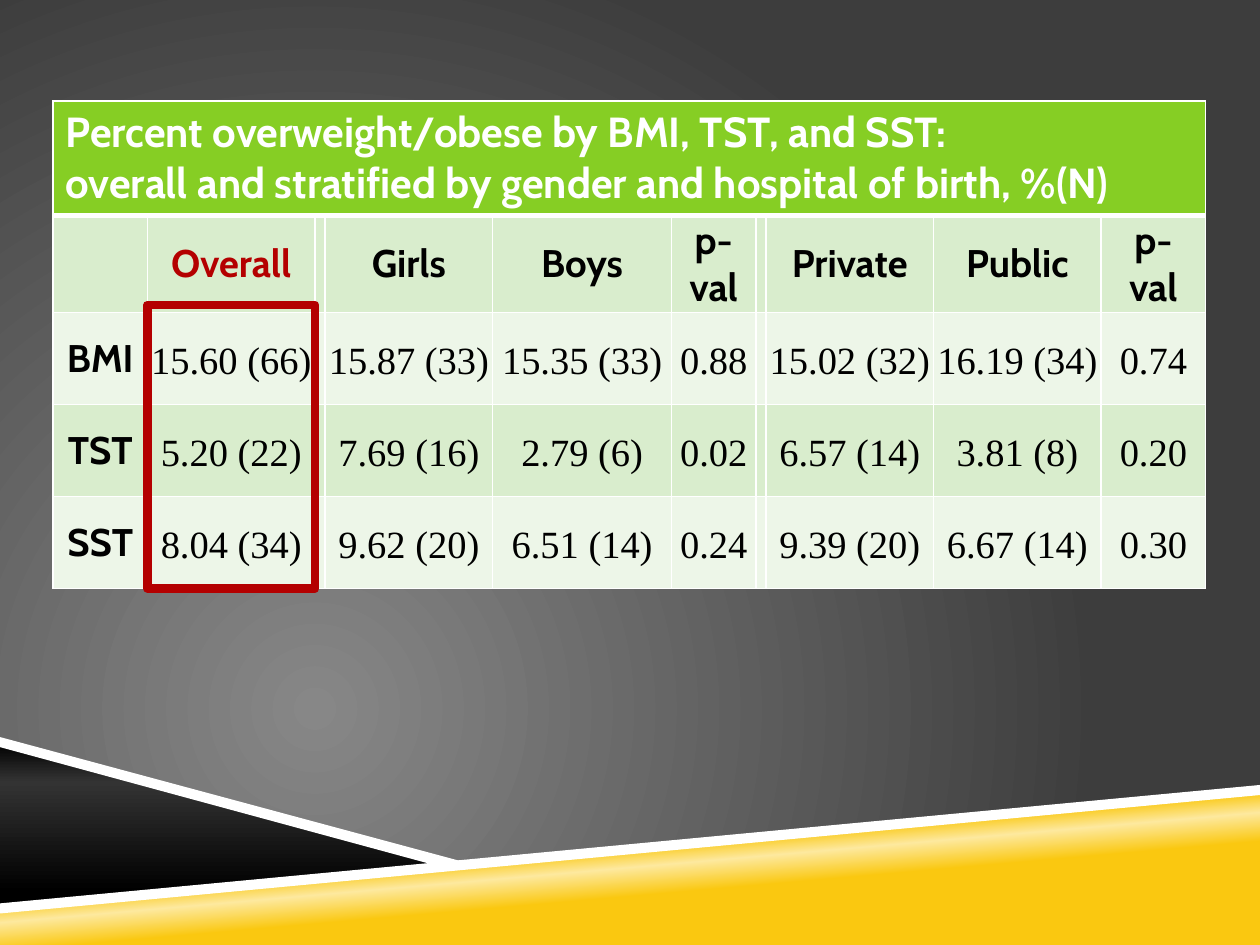
from pptx import Presentation
from pptx.dml.color import RGBColor as RGB
from pptx.enum.shapes import MSO_SHAPE as Kind
from pptx.enum.text import MSO_ANCHOR as Anchor, PP_ALIGN as Align
from pptx.oxml import parse_xml as parse
from pptx.oxml.ns import nsdecls, qn
from pptx.util import Inches, Pt
from lxml.etree import SubElement as Sub

HUES = {"white": "FFFFFF", "black": "000000", "red": "B40000", "green": "86CE24",
        "mint": "D9EDCD", "pale": "EDF6E8", "gold": "FAC810", "cream": "FDE99F",
        "coal": "333333", "grey": "878787", "dark": "3D3D3D"}


def blend(root, stops, way):
    grad = root.find(".//" + qn("a:gradFill"))
    marks = "".join(f'<a:gs pos="{at * 1000}"><a:srgbClr val="{HUES[hue]}"/></a:gs>'
                    for at, hue in stops)
    grad.getparent().replace(grad, parse(
        f'<a:gradFill {nsdecls("a")} rotWithShape="1"><a:gsLst>{marks}</a:gsLst>{way}</a:gradFill>'))


def write(cell, text, look, hue, space=None, align=None):
    cell.text = text
    for para in cell.text_frame.paragraphs:
        para.alignment = align
        para.line_spacing = space
        for run in para.runs:
            for key, val in look.items():
                setattr(run.font, key, val)
            run.font.color.rgb = RGB.from_string(HUES[hue])


deck = Presentation()
deck.slide_width, deck.slide_height = Inches(10), Inches(7.5)
slide = deck.slides.add_slide(deck.slide_layouts[6])

slide.background.fill.gradient()
blend(slide.background._cSld, [(0, "grey"), (100, "dark")],
      '<a:path path="circle"><a:fillToRect l="50000" t="100000" r="100000" b="50000"/></a:path>')

gold = [(39, "gold"), (50, "cream"), (58, "gold")]
night = [(0, "black"), (24, "coal"), (90, "black")]
bands = [
    ([(0, 7.21), (10, 6.27), (10, 7.5), (0, 7.5)], gold, 265),
    ([(0, 5.89), (3.59, 6.85), (0, 7.21)], night, 90),
    ([(10, 6.23), (0, 7.17), (0, 7.25), (10, 6.31)], None, 0),
    ([(0, 5.85), (0, 5.93), (3.5, 6.88), (3.75, 6.86)], None, 0),
]
for spots, stops, angle in bands:
    spots = [(Inches(x), Inches(y)) for x, y in spots]
    pen = slide.shapes.build_freeform(*spots[0], scale=1.0)
    pen.add_line_segments(spots[1:], close=True)
    band = pen.convert_to_shape()
    band.shadow.inherit = False
    band.line.fill.background()
    if stops:
        band.fill.gradient()
        blend(band._element.spPr, stops, f'<a:lin ang="{angle * 60000}" scaled="0"/>')
    else:
        band.fill.solid()
        band.fill.fore_color.rgb = RGB.from_string(HUES["white"])

title = ("Percent overweight/obese by BMI, TST, and SST:\n"
         "overall and stratified by gender and hospital of birth, %(N)")
rows = [
    ["", "Overall", "", "Girls", "Boys", "p-\nval", "", "Private", "Public", "p-\nval"],
    ["BMI", "15.60 (66)", "", "15.87 (33)", "15.35 (33)", "0.88", "", "15.02 (32)", "16.19 (34)", "0.74"],
    ["TST", "5.20 (22)", "", "7.69 (16)", "2.79 (6)", "0.02", "", "6.57 (14)", "3.81 (8)", "0.20"],
    ["SST", "8.04 (34)", "", "9.62 (20)", "6.51 (14)", "0.24", "", "9.39 (20)", "6.67 (14)", "0.30"],
]
wide = [0.75, 1.33, 0.08, 1.33, 1.42, 0.67, 0.08, 1.33, 1.33, 0.83]
high = [0.9, 0.77, 0.73, 0.73, 0.73]
head = {"size": Pt(24), "name": "Cabin", "bold": True}
label = {**head, "size": Pt(22)}
value = {"size": Pt(22), "name": "Times New Roman", "bold": False}
inset = dict.fromkeys(["margin_left", "margin_top", "margin_right", "margin_bottom"], 0)
inset["vertical_anchor"] = Anchor.MIDDLE

grid = slide.shapes.add_table(len(high), len(wide), Inches(0.42), Inches(0.8),
                              Inches(9.17), Inches(3.87)).table
for col, size in zip(grid.columns, wide):
    col.width = Inches(size)
for row, size in zip(grid.rows, high):
    row.height = Inches(size)

for r in range(len(high)):
    for c in range(len(wide)):
        cell = grid.cell(r, c)
        props = cell._tc.get_or_add_tcPr()
        for side in "LRTB":
            thick = 3 if (r, side) in [(0, "B"), (1, "T")] else 1
            props.append(parse(
                f'<a:ln{side} {nsdecls("a")} w="{thick * 12700}"><a:solidFill>'
                f'<a:srgbClr val="{HUES["white"]}"/></a:solidFill></a:ln{side}>'))
        hue = "green" if r == 0 else "mint" if r % 2 else "pale"
        cell.fill.solid()
        cell.fill.fore_color.rgb = RGB.from_string(HUES[hue])
        if r == 0:
            continue
        for key, val in inset.items():
            setattr(cell, key, val)
        plain = r > 1 and c > 0
        write(cell, rows[r - 1][c], value if plain else label,
              "red" if (r, c) == (1, 1) else "black", 1.15 if plain else None, Align.CENTER)

grid.cell(0, 0).merge(grid.cell(0, len(wide) - 1))
write(grid.cell(0, 0), title, head, "white")

frame = slide.shapes.add_shape(Kind.RECTANGLE, Inches(1.17), Inches(2.42), Inches(1.33), Inches(2.25))
frame.shadow.inherit = False
frame.fill.background()
frame.line.color.rgb = RGB.from_string(HUES["red"])
frame.line.width = Pt(5)
Sub(frame._element.spPr.find(qn("a:ln")), qn("a:round"))

deck.save("out.pptx")
